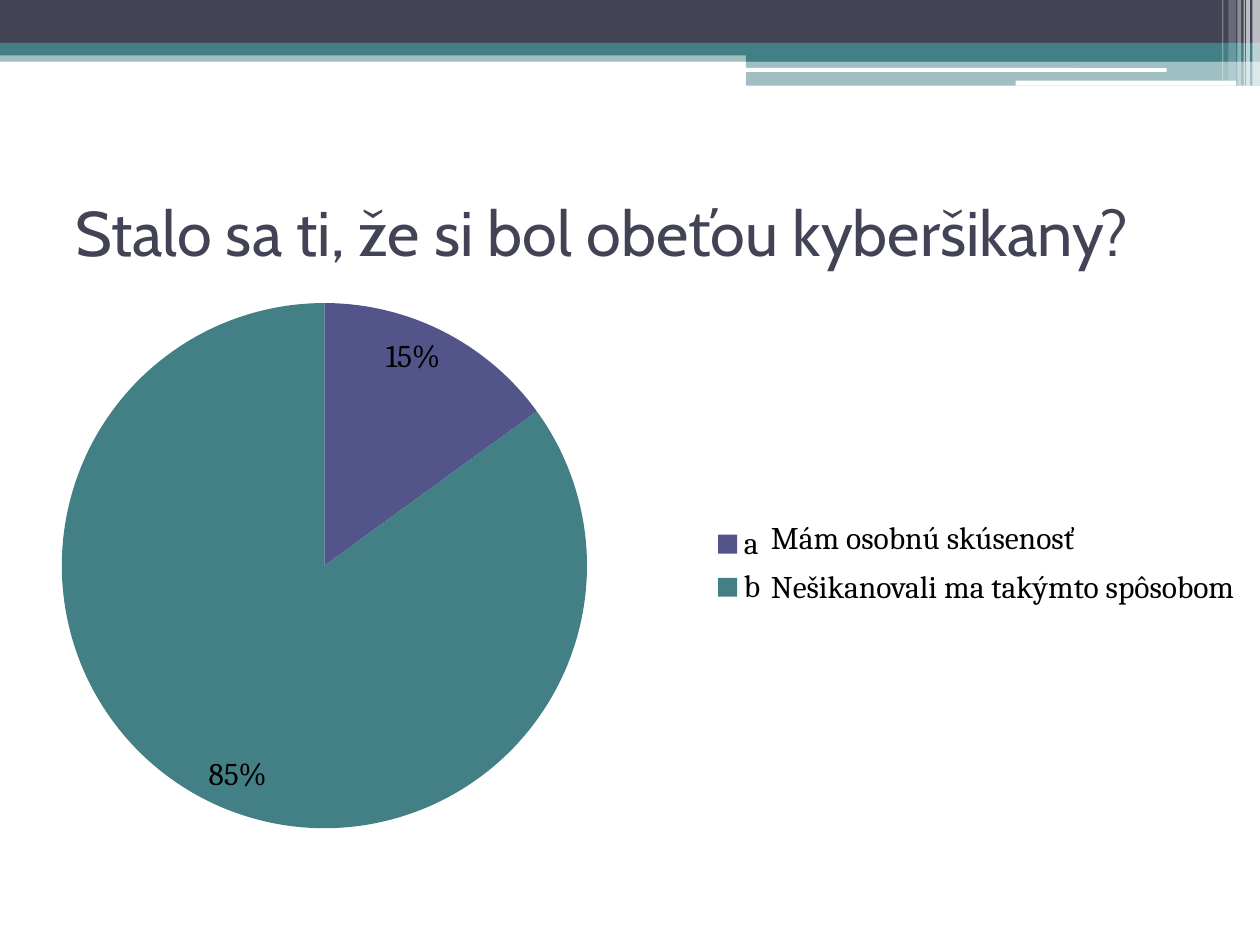
from lxml import etree
from pptx import Presentation
from pptx import util as u
from pptx.chart.data import CategoryChartData
from pptx.dml.color import RGBColor
from pptx.enum import chart as ch, shapes, text
from pptx.oxml import parse_xml
from pptx.oxml.ns import nsdecls, qn

WHITE = RGBColor(0xFF, 0xFF, 0xFF)
BLACK = RGBColor(0, 0, 0)
NAVY = RGBColor(0x42, 0x44, 0x56)
TEAL = RGBColor(0x43, 0x80, 0x86)
VIOLET = RGBColor(0x53, 0x54, 0x8A)

TITLE = "Stalo sa ti, že si bol obeťou kyberšikany?"
SHARES = [("a", 15, VIOLET), ("b", 85, TEAL)]
NOTES = ["Mám osobnú skúsenosť", "Nešikanovali ma takýmto spôsobom"]

BANDS = [
    (0, 0.4, 10, 0.09, TEAL, 50),
    (0, 0, 10, 0.34, NAVY, 100),
    (0, 0.34, 10, 0.1, TEAL, 100),
    (5.92, 0.39, 4.08, 0.1, TEAL, 100),
    (5.92, 0.48, 4.08, 0.2, TEAL, 50),
]
BARS = [(5.91, 0.54, 3.35, 0.03, WHITE, 100), (8.06, 0.64, 1.75, 0.04, WHITE, 100)]
STRIPES = [
    (9.94, 0.06, 0.68, 65),
    (9.89, 0.03, 0.68, 65),
    (9.87, 0.01, 0.68, 60),
    (9.82, 0.03, 0.68, 40),
    (9.75, 0.06, 0.64, 20),
    (9.7, 0.01, 0.64, 30),
]
FRAME = (-0.47, 2.27, 6.67, 4.44)
PIE = {"x": 0.144, "y": 0.03, "w": 0.625, "h": 0.94}

deck = Presentation()
deck.slide_width, deck.slide_height = u.Inches(10), u.Inches(7.5)
slide = deck.slides.add_slide(deck.slide_layouts[6])


def place(*box):
    return [u.Inches(n) for n in box]


def style(font, size, name, color):
    font.size, font.name = u.Pt(size), name
    font.color.rgb = color


def block(x, y, w, h, color, alpha, kind=shapes.MSO_SHAPE.RECTANGLE):
    shape = slide.shapes.add_shape(kind, *place(x, y, w, h))
    shape.shadow.inherit = False
    shape.fill.solid()
    shape.fill.fore_color.rgb = color
    shape.line.fill.background()
    if alpha < 100:
        tint = shape._element.spPr.find(qn("a:solidFill"))[0]
        etree.SubElement(tint, qn("a:alpha")).set("val", str(alpha * 1000))


def label(words, box, size, name, color, wrap):
    frame = slide.shapes.add_textbox(*place(*box)).text_frame
    frame.word_wrap = wrap
    frame.text = words
    style(frame.paragraphs[0].font, size, name, color)
    return frame


for band in BANDS:
    block(*band)
for bar in BARS:
    block(*bar, shapes.MSO_SHAPE.ROUNDED_RECTANGLE)
for x, w, h, alpha in STRIPES:
    block(x, 0, w, h, WHITE, alpha)

head = label(TITLE, (0.5, 1.25, 9, 1.17), 36, "Cabin", NAVY, True)
head.vertical_anchor = text.MSO_ANCHOR.MIDDLE

data = CategoryChartData()
data.categories = [name for name, _, _ in SHARES]
data.add_series("Series 1", [share for _, share, _ in SHARES])
chart = slide.shapes.add_chart(ch.XL_CHART_TYPE.PIE, *place(*FRAME), data).chart
style(chart.font, 18, "Cambria", BLACK)
chart.has_title = False
chart.has_legend = True
chart.legend.position = ch.XL_LEGEND_POSITION.RIGHT
chart.legend.include_in_layout = False

plot = chart.plots[0]
plot.vary_by_categories = True
plot.has_data_labels = True
tags = plot.data_labels
tags.show_value, tags.show_percentage = False, True
tags.number_format, tags.number_format_is_linked = "0%", False
tags.position = ch.XL_LABEL_POSITION.INSIDE_END
style(tags.font, 18, "Cambria", BLACK)
for i, (_, _, color) in enumerate(SHARES):
    fill = plot.series[0].points[i].format.fill
    fill.solid()
    fill.fore_color.rgb = color

area = chart._chartSpace.chart.plotArea
for old in area.findall(qn("c:layout")):
    area.remove(old)
modes = '<c:layoutTarget val="inner"/><c:xMode val="edge"/><c:yMode val="edge"/>'
sizes = "".join(f'<c:{key} val="{part}"/>' for key, part in PIE.items())
area.insert(0, parse_xml(
    f'<c:layout {nsdecls("c")}><c:manualLayout>{modes}{sizes}</c:manualLayout></c:layout>'))

for row, note in enumerate(NOTES):
    label(note, (6.02, 4.06 + 0.39 * row, 4.12, 0.4), 18, "Cambria", BLACK, False)

deck.save("out.pptx")
